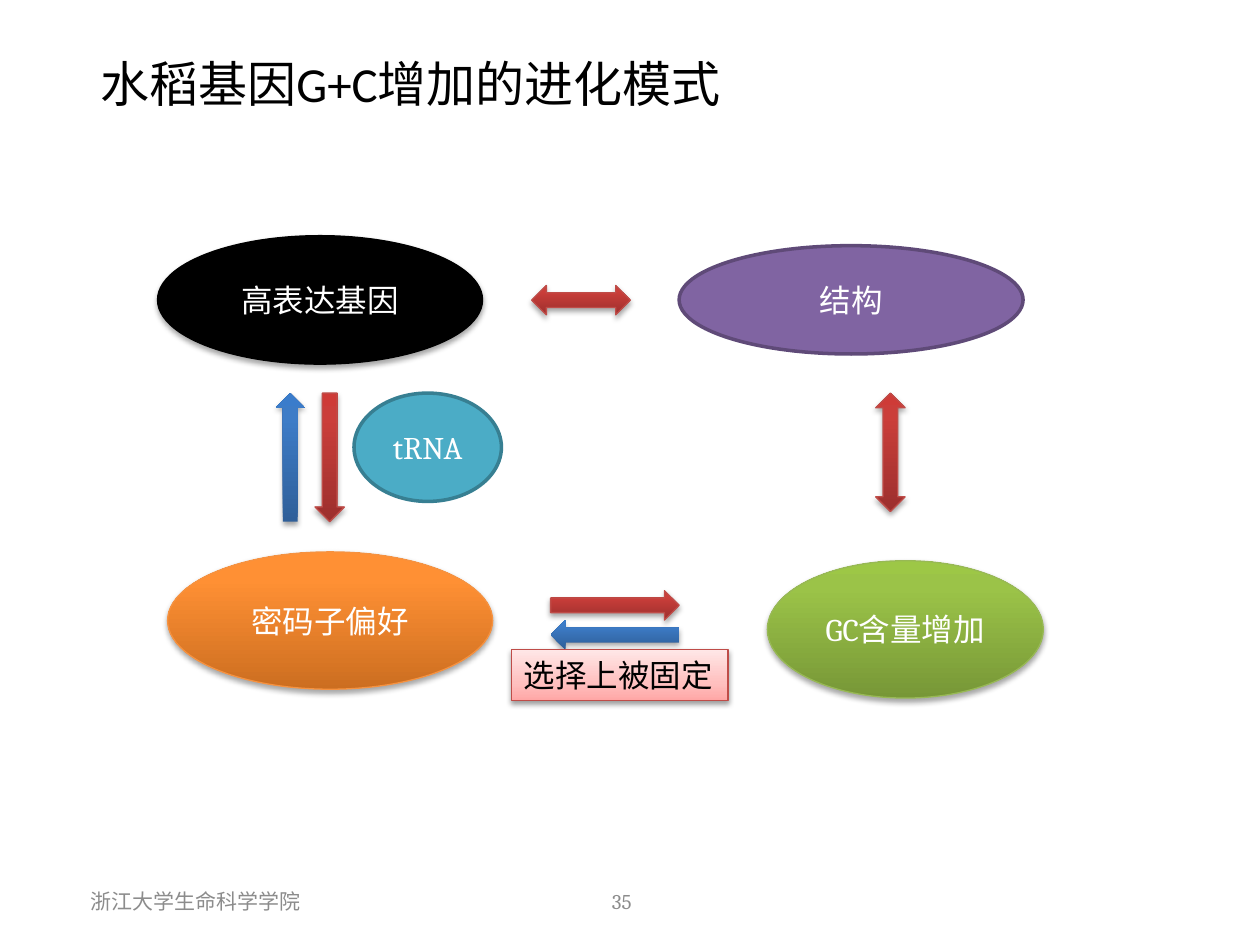
from pptx import Presentation
from pptx.dml.color import RGBColor
from pptx.enum.shapes import MSO_SHAPE
from pptx.enum.text import MSO_ANCHOR, MSO_AUTO_SIZE, PP_ALIGN
from pptx.oxml import parse_xml
from pptx.oxml.ns import nsdecls
from pptx.util import Pt

BLACK = RGBColor(0x00, 0x00, 0x00)
WHITE = RGBColor(0xFF, 0xFF, 0xFF)
GREY = RGBColor(0x8C, 0x8C, 0x8C)
PURPLE = RGBColor(0x80, 0x64, 0xA2)
DARK_PURPLE = RGBColor(0x5F, 0x4A, 0x78)
TEAL = RGBColor(0x4B, 0xAC, 0xC6)
DARK_TEAL = RGBColor(0x37, 0x7F, 0x92)
RED_LINE = RGBColor(0xBF, 0x4C, 0x48)
ORANGE_LINE = RGBColor(0xF6, 0x92, 0x40)
GREEN_LINE = RGBColor(0x98, 0xB9, 0x55)

RED = [(0, "9C2F2D"), (80, "CB3E3A"), (100, "CE3B37")]
BLUE = [(0, "2F5F99"), (80, "3D7CC7"), (100, "3A7CCB")]
ORANGE = [(0, "CC6E20"), (80, "FF9034"), (100, "FF9136")]
GREEN = [(0, "779737"), (80, "9BC348"), (100, "9DC746")]
PINK = [(0, "FFA6A5"), (35, "FFC0BF"), (100, "FFE7E7")]

TITLE = "水稻基因G+C增加的进化模式"
FOOTERS = [
    ("浙江大学生命科学学院", 44.64, 219.6, PP_ALIGN.LEFT),
    ("35", 303.84, 102.96, PP_ALIGN.CENTER),
]
SOFT_SHADOW = (35, 1.8)
LABEL_SHADOW = (38, 1.6)

ELLIPSES = [
    ("高表达基因", (90, 134.64, 185.76, 73.44), BLACK, BLACK, 0.75, SOFT_SHADOW),
    ("结构", (388.08, 140.4, 196.56, 61.92), PURPLE, DARK_PURPLE, 2, None),
    ("密码子偏好", (95.76, 315.36, 185.76, 78.48), ORANGE, ORANGE_LINE, 0.75, SOFT_SHADOW),
    ("tRNA", (202.32, 224.64, 84.24, 61.92), TEAL, DARK_TEAL, 2, None),
    ("GC含量增加", (438.48, 320.4, 157.68, 78.48), GREEN, GREEN_LINE, 0.75, SOFT_SHADOW),
]
ARROW_BREADTH = 16.8
ARROW_TOP = 224.64
ARROWS = [
    (MSO_SHAPE.LEFT_RIGHT_ARROW, (303.84, 163.1, 56.4, ARROW_BREADTH), RED, RED_LINE),
    (MSO_SHAPE.DOWN_ARROW, (180, ARROW_TOP, ARROW_BREADTH, 73.44), RED, RED_LINE),
    (MSO_SHAPE.RIGHT_ARROW, (314.64, 337.5, 73.44, ARROW_BREADTH), RED, RED_LINE),
    (MSO_SHAPE.UP_DOWN_ARROW, (500.4, ARROW_TOP, ARROW_BREADTH, 67.68), RED, RED_LINE),
    (MSO_SHAPE.LEFT_ARROW, (314.64, 354.4, 73.44, ARROW_BREADTH), BLUE, None),
    (MSO_SHAPE.UP_ARROW, (157.5, ARROW_TOP, ARROW_BREADTH, 73.44), BLUE, None),
]
LABEL = ("选择上被固定", (292.2, 371.3, 123.84, 29.1))


def write(frame, text, size, color, align, font="Cambria"):
    frame.vertical_anchor = MSO_ANCHOR.MIDDLE
    paragraph = frame.paragraphs[0]
    paragraph.alignment = align
    run = paragraph.add_run()
    run.text = text
    run.font.name = font
    run.font.size = Pt(size)
    run.font.color.rgb = color


def fill_gradient(shape, stops):
    stop_xml = "".join(
        f'<a:gs pos="{position * 1000}"><a:srgbClr val="{color}"/></a:gs>'
        for position, color in stops
    )
    shape._element.spPr.insert(2, parse_xml(
        f'<a:gradFill {nsdecls("a")} rotWithShape="1"><a:gsLst>{stop_xml}</a:gsLst>'
        '<a:lin ang="16200000" scaled="0"/></a:gradFill>'
    ))


def add_shadow(shape, opacity, distance):
    effects = shape._element.spPr.find("{*}effectLst")
    effects.append(parse_xml(
        f'<a:outerShdw {nsdecls("a")} blurRad="{Pt(3.1)}" dist="{Pt(distance)}" '
        'dir="5400000" rotWithShape="0"><a:srgbClr val="000000">'
        f'<a:alpha val="{opacity * 1000}"/></a:srgbClr></a:outerShdw>'
    ))


def add_shape(slide, kind, box, fill, line, width=0.75, shadow=SOFT_SHADOW):
    shape = slide.shapes.add_shape(kind, *map(Pt, box))
    shape.shadow.inherit = False
    if isinstance(fill, list):
        fill_gradient(shape, fill)
    else:
        shape.fill.solid()
        shape.fill.fore_color.rgb = fill
    if line is None:
        shape.line.fill.background()
    else:
        shape.line.color.rgb = line
        shape.line.width = Pt(width)
    if shadow:
        add_shadow(shape, *shadow)
    return shape


def main():
    presentation = Presentation()
    presentation.slide_width = Pt(720)
    presentation.slide_height = Pt(540)
    slide = presentation.slides.add_slide(presentation.slide_layouts[5])

    title = slide.shapes.title
    title.left, title.top, title.width, title.height = map(Pt, (50.4, 21.6, 633.6, 51.84))
    title.text_frame.auto_size = MSO_AUTO_SIZE.NONE
    write(title.text_frame, TITLE, 28, BLACK, PP_ALIGN.LEFT, "Calibri")

    for text, left, width, align in FOOTERS:
        footer = slide.shapes.add_textbox(Pt(left), Pt(500.4), Pt(width), Pt(28.8))
        footer.text_frame.word_wrap = True
        write(footer.text_frame, text, 12, GREY, align)

    for text, *style in ELLIPSES:
        ellipse = add_shape(slide, MSO_SHAPE.OVAL, *style)
        write(ellipse.text_frame, text, 18, WHITE, PP_ALIGN.CENTER)

    for arrow in ARROWS:
        add_shape(slide, *arrow)

    text, box = LABEL
    label = add_shape(slide, MSO_SHAPE.RECTANGLE, box, PINK, RED_LINE, shadow=LABEL_SHADOW)
    label.text_frame.word_wrap = False
    label.text_frame.auto_size = MSO_AUTO_SIZE.SHAPE_TO_FIT_TEXT
    write(label.text_frame, text, 18, BLACK, PP_ALIGN.LEFT)

    presentation.save("out.pptx")


if __name__ == "__main__":
    main()
